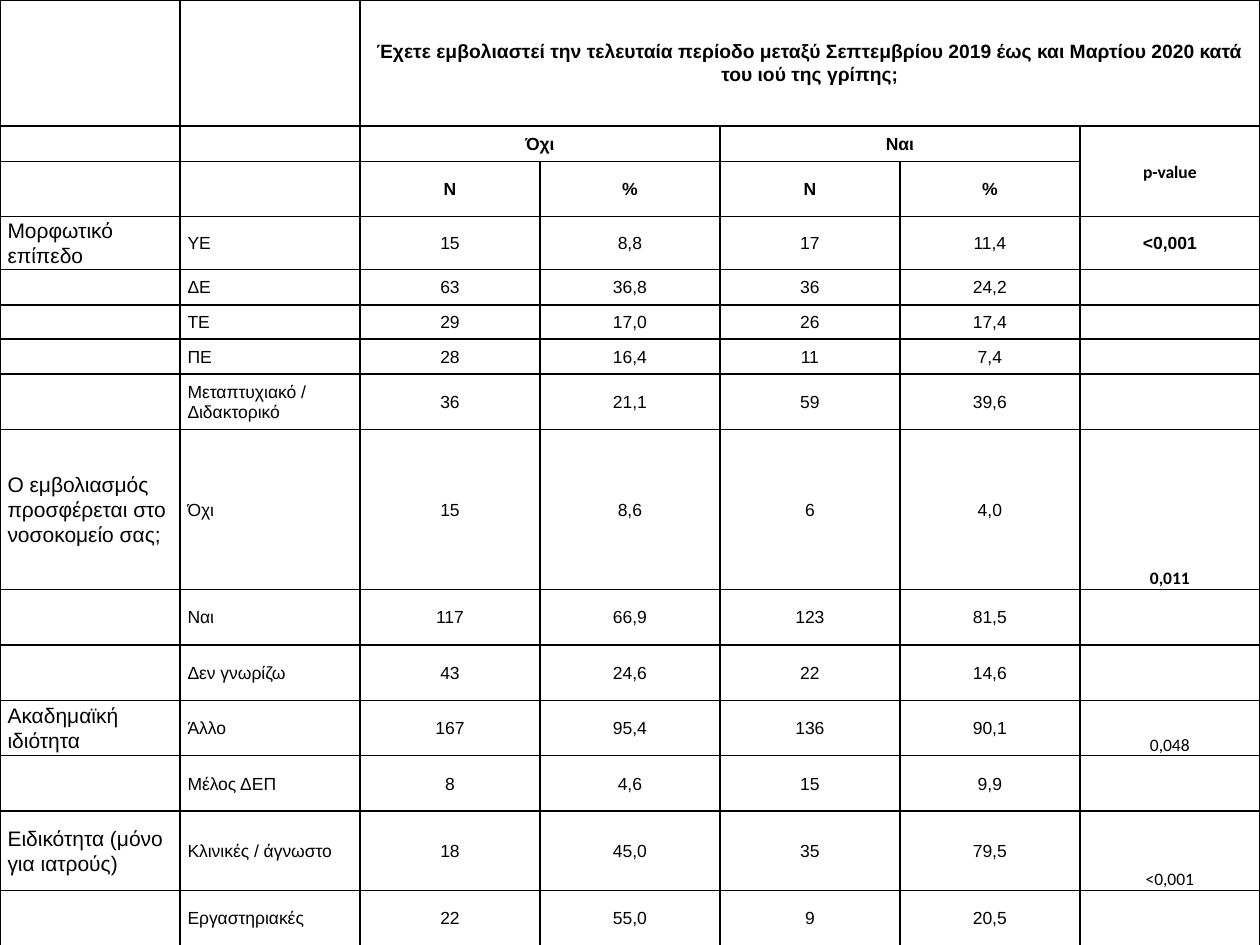
from lxml import etree
from pptx import Presentation
from pptx.dml.color import RGBColor
from pptx.enum.text import MSO_ANCHOR, PP_ALIGN
from pptx.oxml.ns import qn
from pptx.util import Inches, Pt

LEFT, CENTER = PP_ALIGN.LEFT, PP_ALIGN.CENTER
MIDDLE, BOTTOM = MSO_ANCHOR.MIDDLE, MSO_ANCHOR.BOTTOM
BLACK = RGBColor(0x00, 0x00, 0x00)
WHITE = RGBColor(0xFF, 0xFF, 0xFF)
LIGHT_GRAY = RGBColor(0xF2, 0xF2, 0xF2)

COLUMNS = 7
ROW_HEIGHTS = [1, 0.28, 0.44, 0.42, 0.28, 0.27, 0.28, 0.44,
               1.27, 0.44, 0.44, 0.44, 0.44, 0.63, 0.44]
FIRST_DATA_ROW = 3
# Group, category, No: N and %, Yes: N and %
DATA = [
    ("Μορφωτικό επίπεδο", "ΥΕ", "15", "8,8", "17", "11,4"),
    ("", "ΔΕ", "63", "36,8", "36", "24,2"),
    ("", "ΤΕ", "29", "17,0", "26", "17,4"),
    ("", "ΠΕ", "28", "16,4", "11", "7,4"),
    ("", "Μεταπτυχιακό / Διδακτορικό", "36", "21,1", "59", "39,6"),
    ("Ο εμβολιασμός προσφέρεται στο νοσοκομείο σας;", "Όχι", "15", "8,6", "6", "4,0"),
    ("", "Ναι", "117", "66,9", "123", "81,5"),
    ("", "Δεν γνωρίζω", "43", "24,6", "22", "14,6"),
    ("Ακαδημαϊκή ιδιότητα", "Άλλο", "167", "95,4", "136", "90,1"),
    ("", "Μέλος ΔΕΠ", "8", "4,6", "15", "9,9"),
    ("Ειδικότητα (μόνο για ιατρούς)", "Κλινικές / άγνωστο", "18", "45,0", "35", "79,5"),
    ("", "Εργαστηριακές", "22", "55,0", "9", "20,5"),
]


def style_cell(cell):
    """Give the cell thin black borders, a white fill, narrow margins and a small empty line."""
    tc_pr = cell._tc.get_or_add_tcPr()
    for side in ("lnL", "lnR", "lnT", "lnB"):
        ln = etree.SubElement(tc_pr, qn(f"a:{side}"), w=str(Pt(1)))
        fill = etree.SubElement(ln, qn("a:solidFill"))
        etree.SubElement(fill, qn("a:srgbClr"), val=str(BLACK))
    cell.fill.solid()
    cell.fill.fore_color.rgb = WHITE
    cell.margin_left = cell.margin_right = Inches(0.06)
    cell.margin_top = cell.margin_bottom = 0
    p = cell.text_frame.paragraphs[0]
    etree.SubElement(p._p, qn("a:endParaRPr"), sz="1000")


def write(cell, text, size=10, font="Arial", bold=False, align=CENTER, anchor=MIDDLE):
    cell.vertical_anchor = anchor
    p = cell.text_frame.paragraphs[0]
    p.alignment = align
    p.line_spacing = 1.07
    r = p.add_run()
    r.text = text
    r.font.size = Pt(size)
    r.font.name = font
    r.font.bold = bold
    r.font.color.rgb = BLACK


prs = Presentation()
prs.slide_width, prs.slide_height = Inches(10), Inches(7.5)
s = prs.slides.add_slide(prs.slide_layouts[6])
s.background.fill.solid()
s.background.fill.fore_color.rgb = LIGHT_GRAY

table = s.shapes.add_table(len(ROW_HEIGHTS), COLUMNS, 0, 0,
                           Inches(10), Inches(sum(ROW_HEIGHTS))).table
table.first_row = table.horz_banding = False
for column in table.columns:
    column.width = Inches(10 / COLUMNS)
for row, height in zip(table.rows, ROW_HEIGHTS):
    row.height = Inches(height)
    for cell in row.cells:
        style_cell(cell)

# Header
table.cell(0, 2).merge(table.cell(0, 6))
table.cell(1, 2).merge(table.cell(1, 3))
table.cell(1, 4).merge(table.cell(1, 5))
table.cell(1, 6).merge(table.cell(2, 6))
write(table.cell(0, 2), "Έχετε εμβολιαστεί την τελευταία περίοδο μεταξύ Σεπτεμβρίου 2019 "
      "έως και Μαρτίου 2020 κατά του ιού της γρίπης;", size=11, bold=True)
write(table.cell(1, 2), "Όχι", bold=True)
write(table.cell(1, 4), "Ναι", bold=True)
write(table.cell(1, 6), "p-value", font="Calibri", bold=True)
for col, label in enumerate(("N", "%", "N", "%"), start=2):
    write(table.cell(2, col), label, bold=True)

# Groups, categories and counts
for row, (group, category, *values) in enumerate(DATA, start=FIRST_DATA_ROW):
    if group:
        write(table.cell(row, 0), group, size=12, align=LEFT)
    write(table.cell(row, 1), category, align=LEFT)
    for col, value in enumerate(values, start=2):
        write(table.cell(row, col), value)

# Significance of each group
write(table.cell(3, 6), "<0,001", bold=True)
for row, p_value, bold in ((8, "0,011", True), (11, "0,048", False), (13, "<0,001", False)):
    write(table.cell(row, 6), p_value, font="Calibri", bold=bold, anchor=BOTTOM)

prs.save("out.pptx")
